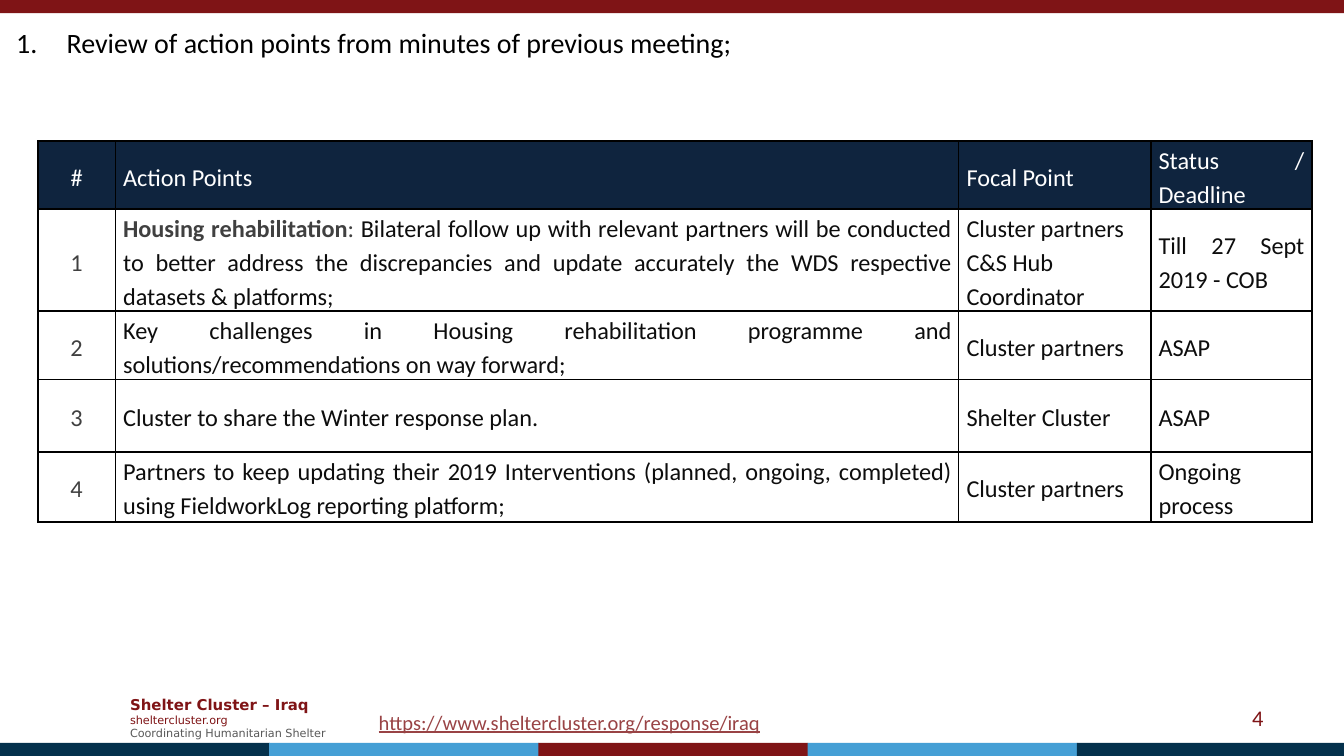
from dataclasses import dataclass

from lxml.etree import SubElement
from pptx import Presentation
from pptx.dml.color import RGBColor
from pptx.enum.shapes import MSO_SHAPE
from pptx.enum.text import MSO_ANCHOR, PP_ALIGN
from pptx.oxml.ns import qn
from pptx.util import Pt


@dataclass(frozen=True)
class Theme:
    """Colours, fonts and type sizes of the slide."""
    maroon: str = "7F1416"
    navy: str = "04314C"
    sky: str = "459FD5"
    header: str = "0F243E"
    link: str = "994345"
    black: str = "000000"
    white: str = "FFFFFF"
    ink: str = "0D0D0D"
    grey: str = "404040"
    light_grey: str = "595959"
    body_font: str = "Calibri"
    brand_font: str = "DejaVu Sans"
    title_size: float = 15
    table_size: float = 13
    number_size: float = 12
    link_size: float = 11
    brand_size: float = 8
    small_size: float = 6


def set_attributes(target, values):
    """Set every named value on the target."""
    for name, value in values.items():
        setattr(target, name, value)


class SlideBuilder:
    """Draws styled elements on the current slide."""

    def __init__(self, slide, theme):
        """Keep the slide and its theme."""
        self.slide = slide
        self.theme = theme

    def bar(self, left, top, width, height, color):
        """Add a plain filled rectangle."""
        shape = self.slide.shapes.add_shape(
            MSO_SHAPE.RECTANGLE, Pt(left), Pt(top), Pt(width), Pt(height))
        shape.shadow.inherit = False
        shape.fill.solid()
        shape.fill.fore_color.rgb = RGBColor.from_string(color)
        shape.line.fill.background()

    def run(self, paragraph, text, size, color, font=None, **style):
        """Add one run of text to a paragraph."""
        run = paragraph.add_run()
        run.text = text
        set_attributes(run.font, {"size": Pt(size), "name": font or self.theme.body_font, **style})
        run.font.color.rgb = RGBColor.from_string(color)

    def text(self, left, top, width, height, lines, numbered=False,
             alignment=PP_ALIGN.LEFT, **frame_format):
        """Add a text box with one run per line."""
        box = self.slide.shapes.add_textbox(Pt(left), Pt(top), Pt(width), Pt(height))
        frame = box.text_frame
        set_attributes(frame, {"word_wrap": True, **frame_format})
        for index, line in enumerate(lines):
            paragraph = frame.add_paragraph() if index else frame.paragraphs[0]
            paragraph.alignment = alignment
            if numbered:
                properties = paragraph._p.get_or_add_pPr()
                properties.set("marL", str(Pt(27)))
                properties.set("indent", str(Pt(-27)))
                SubElement(properties, qn("a:buAutoNum"), type="arabicPeriod")
            self.run(paragraph, **line)

    def border(self, cell):
        """Draw a thin black line on all sides of a cell."""
        properties = cell._tc.get_or_add_tcPr()
        for side in "LRTB":
            line = SubElement(properties, qn(f"a:ln{side}"), w=str(Pt(1)))
            fill = SubElement(line, qn("a:solidFill"))
            SubElement(fill, qn("a:srgbClr"), val=self.theme.black)

    def cell(self, cell, paragraphs, alignment, color, fill=None):
        """Format a cell and write its paragraphs of (text, style) runs."""
        set_attributes(cell, {
            "vertical_anchor": MSO_ANCHOR.MIDDLE, "margin_left": Pt(4.2),
            "margin_right": Pt(4.2), "margin_top": Pt(0.7), "margin_bottom": Pt(0)})
        self.border(cell)
        if fill:
            cell.fill.solid()
            cell.fill.fore_color.rgb = RGBColor.from_string(fill)
        else:
            cell.fill.background()
        for index, runs in enumerate(paragraphs):
            frame = cell.text_frame
            paragraph = frame.add_paragraph() if index else frame.paragraphs[0]
            set_attributes(paragraph, {"alignment": alignment, "line_spacing": 1.15})
            for text, style in runs:
                self.run(paragraph, text, **{"size": self.theme.table_size, "color": color, **style})

    def table(self, left, top, widths, heights, header, rows):
        """Add the action table with a dark header and numbered rows."""
        theme = self.theme
        table = self.slide.shapes.add_table(
            len(heights), len(widths), Pt(left), Pt(top),
            Pt(sum(widths)), Pt(sum(heights))).table
        set_attributes(table, {"first_row": False, "horz_banding": False})
        for column, width in zip(table.columns, widths):
            column.width = Pt(width)
        for row, height in zip(table.rows, heights):
            row.height = Pt(height)
        center, justify, left_align = PP_ALIGN.CENTER, PP_ALIGN.JUSTIFY, PP_ALIGN.LEFT
        for column, title in enumerate(header):
            self.cell(table.cell(0, column), [[(title, {})]],
                      justify if column else center, theme.white, theme.header)
        for number, (action, focal_points, status) in enumerate(rows, 1):
            cells = table.rows[number].cells
            self.cell(cells[0], [[(str(number), {})]], center, theme.grey)
            self.cell(cells[1], [action], justify, theme.ink)
            self.cell(cells[2], [[(name, {})] for name in focal_points], left_align, theme.ink)
            self.cell(cells[3], [[(status, {})]], justify, theme.ink)


def main():
    """Build and save the action point slide."""
    theme = Theme()
    presentation = Presentation()
    presentation.slide_width, presentation.slide_height = Pt(720), Pt(405)
    builder = SlideBuilder(presentation.slides.add_slide(presentation.slide_layouts[6]), theme)

    brand = {"font": theme.brand_font, "size": theme.small_size}
    builder.text(62.6, 368.6, 124.6, 31.7, [
        {**brand, "text": "Shelter Cluster – Iraq", "size": theme.brand_size,
         "color": theme.maroon, "bold": True},
        {**brand, "text": "sheltercluster.org", "color": theme.maroon},
        {**brand, "text": "Coordinating Humanitarian Shelter", "color": theme.light_grey},
    ], vertical_anchor=MSO_ANCHOR.MIDDLE)

    builder.bar(0, 0, 720, 7, theme.maroon)
    footer_colors = (theme.navy, theme.sky, theme.maroon, theme.sky, theme.navy)
    for index, color in enumerate(footer_colors):
        builder.bar(index * 144.25, 398, 144.5, 7, color)

    builder.text(195.8, 376.6, 222.5, 20.9, [
        {"text": "https://www.sheltercluster.org/response/iraq",
         "size": theme.link_size, "color": theme.link, "underline": True}], word_wrap=False)
    builder.text(516.2, 373.7, 167.8, 21.6, [
        {"text": "4", "size": theme.number_size, "color": theme.maroon}],
        alignment=PP_ALIGN.RIGHT, vertical_anchor=MSO_ANCHOR.MIDDLE)
    builder.text(1.6, 10.1, 716.4, 25.4, [
        {"text": "Review of action points from minutes of previous meeting;",
         "size": theme.title_size, "color": theme.black}], numbered=True)

    grey = {"color": theme.grey}
    builder.table(
        20.3, 75.5, (41.5, 451.8, 102.9, 86.4), (33.1, 37.4, 34.6, 38.9, 37.4),
        ("#", "Action Points", "Focal Point", "Status / Deadline"),
        [
            ([("Housing rehabilitation", {**grey, "bold": True}), (": ", grey),
              ("Bilateral follow up with relevant partners will be conducted to better address "
               "the discrepancies and update accurately the WDS respective datasets & platforms;", {})],
             ["Cluster partners", "C&S Hub Coordinator"], "Till 27 Sept 2019 - COB"),
            ([("Key challenges in Housing rehabilitation programme and "
               "solutions/recommendations on way forward;", {})],
             ["Cluster partners"], "ASAP"),
            ([("Cluster to share the Winter response plan.", {})], ["Shelter Cluster"], "ASAP"),
            ([("Partners to keep updating their 2019 Interventions (planned, ongoing, completed) "
               "using FieldworkLog reporting platform;", {})],
             ["Cluster partners"], "Ongoing process"),
        ])
    presentation.save("out.pptx")


if __name__ == "__main__":
    main()
